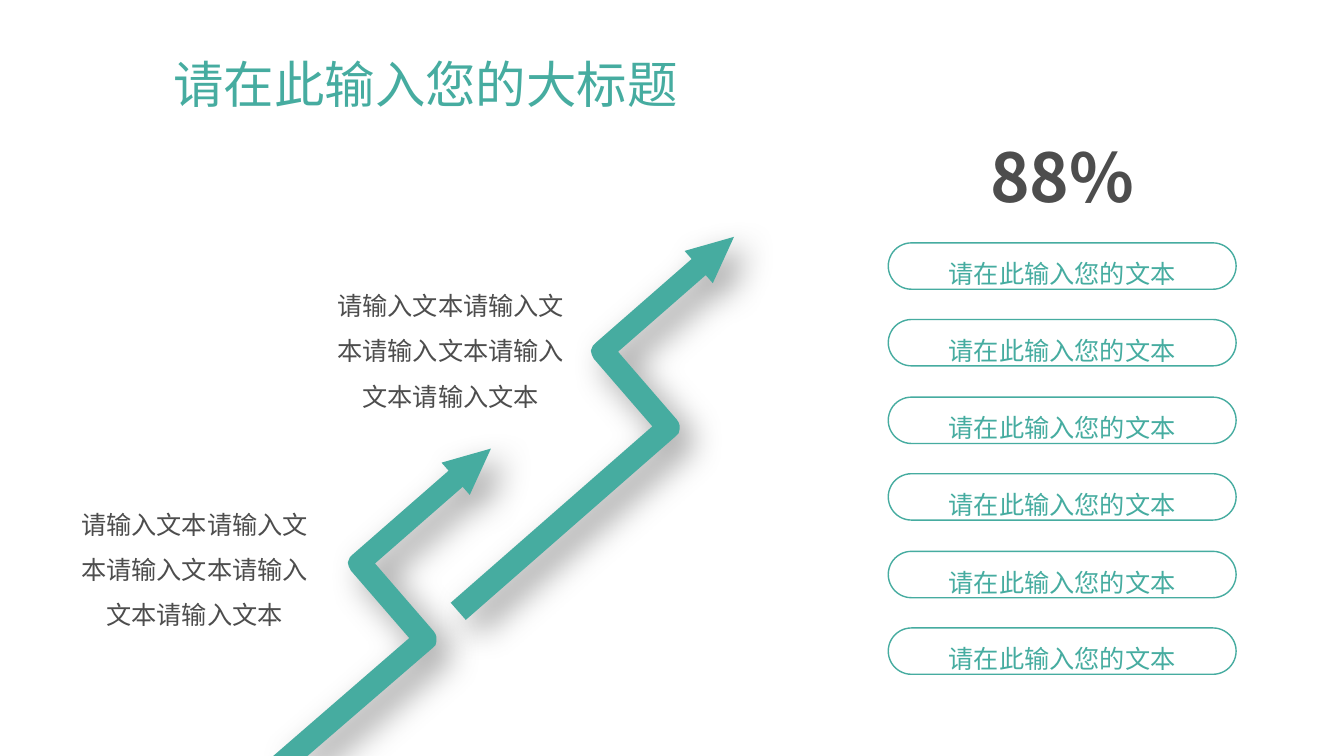
from lxml import etree
from pptx import Presentation
from pptx.dml import color
from pptx.enum import shapes, text
from pptx.oxml import ns
from pptx.util import Emu, Pt

PX = 9144  # one px is a hundredth of an inch
TEAL, GREY, WHITE = "46ACA0", "4D4D4D", "FFFFFF"


def rgb(code):
    return color.RGBColor.from_string(code)


def emu(*px):
    return [Emu(n * PX) for n in px]


def sub(node, tag, **attrs):
    return etree.SubElement(node, ns.qn(tag), attrs)


class Deck:
    font = "Noto Sans CJK SC"

    def __init__(self, wide, high):
        self.prs = Presentation()
        self.prs.slide_width, self.prs.slide_height = emu(wide, high)
        self.slide = self.prs.slides.add_slide(self.prs.slide_layouts[5])

    def letter(self, frame, words, size, ink, align=text.PP_ALIGN.CENTER,
               gap=None, bold=False, anchor=text.MSO_ANCHOR.MIDDLE):
        frame.text = words
        frame.word_wrap = True
        frame.auto_size = text.MSO_AUTO_SIZE.NONE
        frame.vertical_anchor = anchor
        para = frame.paragraphs[0]
        para.alignment = align
        para.line_spacing = gap
        run = para.runs[0]
        run.font.size = Pt(size)
        run.font.bold = bold
        run.font.color.rgb = rgb(ink)
        run.font.name = self.font
        sub(run.font._element, "a:ea", typeface=self.font)

    def title(self, words, box):
        head = self.slide.shapes.title
        head.left, head.top, head.width, head.height = emu(*box)
        self.letter(head.text_frame, words, 36, TEAL, text.PP_ALIGN.LEFT, 0.9)

    def label(self, words, box, size=18, **style):
        item = self.slide.shapes.add_textbox(*emu(*box))
        self.letter(item.text_frame, words, size, GREY, **style)

    def pill(self, words, box):
        item = self.slide.shapes.add_shape(
            shapes.MSO_SHAPE.ROUNDED_RECTANGLE, *emu(*box))
        item.adjustments[0] = 0.5
        item.shadow.inherit = False
        item.fill.solid()
        item.fill.fore_color.rgb = rgb(WHITE)
        item.line.color.rgb = rgb(TEAL)
        item.line.width = Pt(1)
        self.letter(item.text_frame, words, 18, TEAL, gap=1.5)

    def arrow(self, tip, tail):
        """Zigzag arrow: bends are measured from the tip, the tail is free."""
        def place(bends):
            return [(tip[0] + x, tip[1] + y) for x, y in bends]

        dots = place(RIGHT) + tail + place(LEFT)
        pen = self.slide.shapes.build_freeform(*tip, scale=PX)
        pen.add_line_segments(dots, close=True)
        item = pen.convert_to_shape()
        item.fill.solid()
        item.fill.fore_color.rgb = rgb(TEAL)
        item.line.fill.background()
        item.shadow.inherit = False
        effect = item._element.spPr.find(ns.qn("a:effectLst"))
        shade = sub(effect, "a:outerShdw", blurRad=str(Pt(25)),
                    dist=str(Pt(13)), dir="2700000", algn="tl",
                    rotWithShape="0")
        tint = sub(shade, "a:srgbClr", val="000000")
        sub(tint, "a:alpha", val="40000")


# Arrow outline on either side of the tail, with rounded elbows
RIGHT = [(-21, 46), (-28, 38), (-115, 114), (-57, 181), (-55, 184),
         (-54, 187), (-54, 191), (-55, 195), (-58, 198)]
LEFT = [(-81, 188), (-139, 121), (-141, 117), (-142, 113), (-140, 108),
        (-137, 105), (-42, 22), (-49, 14)]


def main():
    deck = Deck(1333, 750)
    deck.title("请在此输入您的大标题", (162, 40, 1088, 93))

    # Rising arrows with their captions
    note = "请输入文本" * 5
    deck.arrow((487, 445), [(305, 750), (271, 750)])
    deck.label(note, (66, 481, 254, 153), gap=1.5)
    deck.arrow((728, 235), [(462, 615), (447, 598)])
    deck.label(note, (320, 264, 254, 153), gap=1.5)

    # Column of pills under the big figure
    for row in range(6):
        deck.pill("请在此输入您的文本", (881, 241 + round(76.4 * row), 345, 46))
    deck.label("88%", (937, 129, 233, 91), size=48, bold=True,
               anchor=text.MSO_ANCHOR.TOP)

    deck.prs.save("out.pptx")


if __name__ == "__main__":
    main()
